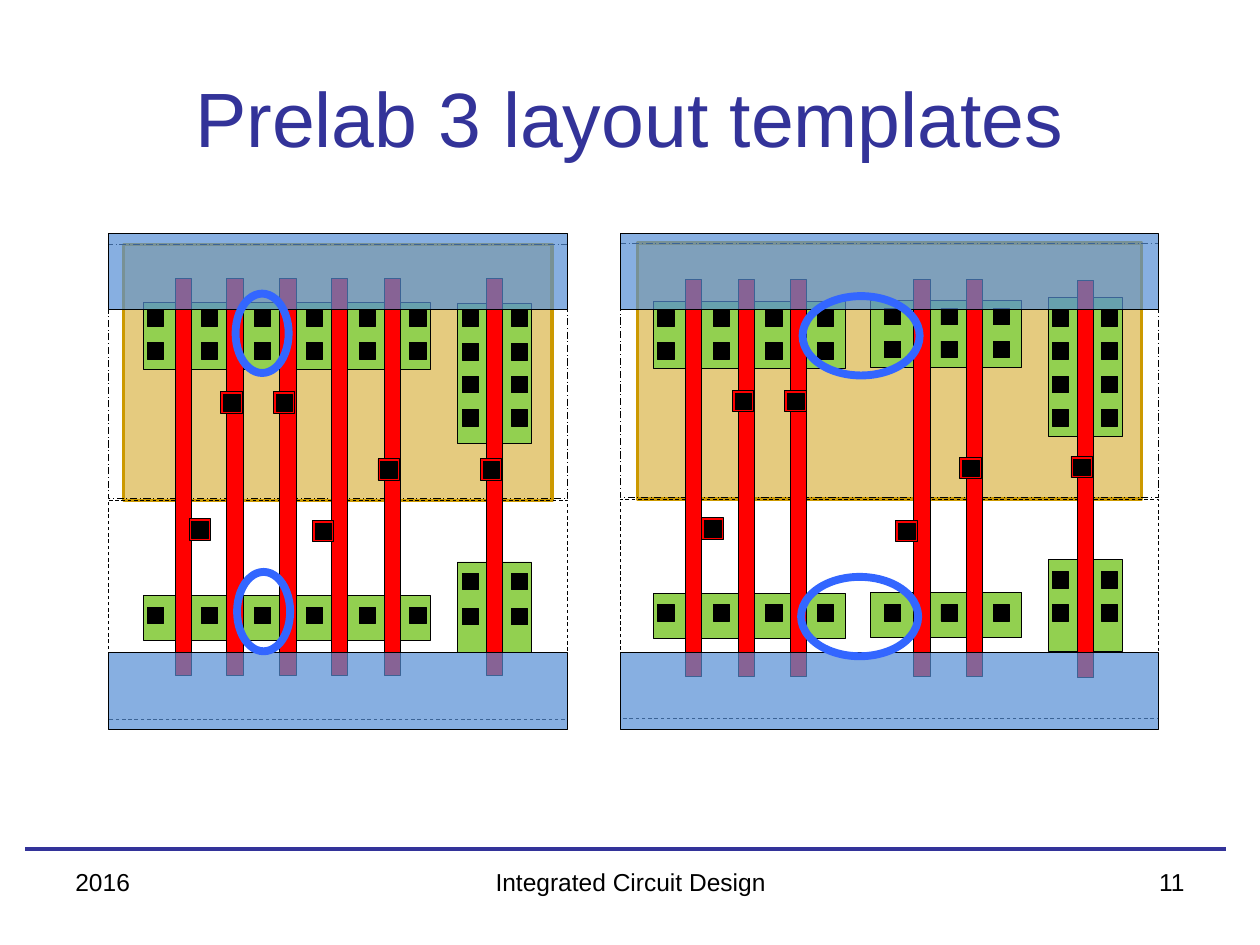
from itertools import product

from lxml import etree
from pptx import Presentation
from pptx import util as u
from pptx.dml import color
from pptx.enum import dml, shapes, text
from pptx.oxml import ns

NAVY, BLACK, RED, GREEN = "333399", "000000", "FF0000", "92D050"
OCHRE, METAL, HIGHLIGHT = "CC9900", "558ED5", "3366FF"

GATE_W, GATE_H = 0.33, 8
CONTACT, PAD, PAD_MARGIN = 0.33, 0.43, 0.06
RAIL_H, RAIL_TOPS = 1.55, (13.16, 4.7)

# All lengths in centimetres. A diffusion column holds its p and n areas as
# (top, height) bands, with contacts at each crossing of columns and rows.
NARROW_CELL = dict(
    left=2.18, width=9.27, top=4.93, middle=10.08, well=(2.49, 8.64),
    diffusions=[
        dict(left=2.9, width=5.77, bands=[(6.1, 1.35), (12.01, 0.91)],
             columns=[2.97, 4.06, 5.13, 6.17, 7.24, 8.26],
             rows=[6.25, 6.91, 12.24]),
        dict(left=9.22, width=1.5, bands=[(6.12, 2.82), (11.33, 1.83)],
             columns=[9.32, 10.31],
             rows=[6.25, 6.93, 7.59, 8.26, 11.56, 12.27]),
    ],
    gates=[(x, 5.61) for x in (3.53, 4.57, 5.64, 6.68, 7.75, 9.8)],
    pads=[(3.81, 10.46), (4.45, 7.9), (5.51, 7.9),
          (6.3, 10.49), (7.62, 9.25), (9.68, 9.25)],
)
WIDE_CELL = dict(
    left=12.5, width=10.85, top=4.9, middle=10.06, well=(12.85, 10.16),
    diffusions=[
        dict(left=13.18, width=3.86, bands=[(6.07, 1.35), (11.96, 0.91)],
             columns=[13.26, 14.38, 15.44, 16.48],
             rows=[6.25, 6.91, 12.19]),
        dict(left=17.55, width=3.05, bands=[(6.05, 1.35), (11.94, 0.91)],
             columns=[17.83, 18.97, 20.02],
             rows=[6.22, 6.88, 12.19]),
        dict(left=21.13, width=1.5, bands=[(5.99, 2.82), (11.28, 1.85)],
             columns=[21.21, 22.2],
             rows=[6.25, 6.91, 7.59, 8.26, 11.53, 12.19]),
    ],
    gates=[(13.82, 5.64), (14.88, 5.64), (15.93, 5.64),
           (18.42, 5.64), (19.48, 5.64), (21.72, 5.66)],
    pads=[(14.15, 10.44), (14.76, 7.87), (15.82, 7.87),
          (18.06, 10.49), (19.35, 9.22), (21.59, 9.2)],
)
HIGHLIGHTS = [(4.78, 11.53, 1.07), (16.15, 11.63, 2.36),
              (4.75, 5.92, 1.07), (16.18, 5.97, 2.36)]
HIGHLIGHT_H = 1.6


def rgb(hex_code):
    return color.RGBColor.from_string(hex_code)


def write(frame, content, *, size, tint=BLACK, font="Arial",
          align=text.PP_ALIGN.LEFT, anchor=text.MSO_ANCHOR.TOP):
    frame.word_wrap = True
    frame.vertical_anchor = anchor
    line = frame.paragraphs[0]
    line.alignment = align
    run = line.add_run()
    run.text = content
    run.font.size = u.Pt(size)
    run.font.name = font
    run.font.color.rgb = rgb(tint)


class Layout:
    """Drawing style and the slide, or group on it, being drawn on."""

    def __init__(self, slide):
        self.slide = slide
        self.target = slide.shapes

    def start_group(self):
        self.target = self.slide.shapes.add_group_shape().shapes

    def outline(self, kind, box, fill=None, opacity=100,
                line=BLACK, weight=0.5, dash=None):
        shape = self.target.add_shape(kind, *map(u.Cm, box))
        shape.shadow.inherit = False
        if fill:
            shape.fill.solid()
            shape.fill.fore_color.rgb = rgb(fill)
            if opacity < 100:
                tint = shape.fill._xPr.find(".//" + ns.qn("a:srgbClr"))
                etree.SubElement(tint, ns.qn("a:alpha"), val=str(opacity * 1000))
        else:
            shape.fill.background()
        shape.line.color.rgb = rgb(line)
        shape.line.width = u.Pt(weight)
        if dash:
            shape.line.dash_style = dash

    def rect(self, *box, **style):
        self.outline(shapes.MSO_SHAPE.RECTANGLE, box, **style)

    def ring(self, *box):
        self.outline(shapes.MSO_SHAPE.OVAL, box, line=HIGHLIGHT, weight=4.5)

    def contact(self, left, top):
        self.rect(left, top, CONTACT, CONTACT, fill=BLACK)

    def label(self, box, content, **style):
        area = self.slide.shapes.add_textbox(*map(u.Cm, box))
        write(area.text_frame, content, **style)

    def rule(self, left, right, top):
        divider = self.slide.shapes.add_connector(
            shapes.MSO_CONNECTOR.STRAIGHT, *map(u.Cm, (left, top, right, top)))
        divider.line.color.rgb = rgb(NAVY)
        divider.line.width = u.Pt(2.25)
        etree.SubElement(divider._element.spPr, ns.qn("a:effectLst"))

    def cell(self, left, width, top, middle, well, diffusions, gates, pads):
        """Stack one circuit cell from its well up to its power rails."""
        self.start_group()
        well_left, well_width = well
        self.rect(well_left, top, well_width, 5.16,
                  fill=OCHRE, opacity=50, line=OCHRE, weight=2)
        self.rect(left, top, width, 5.13, dash=dml.MSO_LINE.LONG_DASH_DOT)
        self.rect(left, middle, width, 4.42, dash=dml.MSO_LINE.DASH)
        for area in diffusions:
            for band_top, height in area["bands"]:
                self.rect(area["left"], band_top, area["width"], height, fill=GREEN)
        for gate in gates:
            self.rect(*gate, GATE_W, GATE_H, fill=RED)
        for area in diffusions:
            for spot in product(area["columns"], area["rows"]):
                self.contact(*spot)
        for x, y in pads:
            self.rect(x, y, PAD, PAD, fill=RED)
            self.contact(x + PAD_MARGIN, y + PAD_MARGIN)
        for rail_top in RAIL_TOPS:
            self.rect(left, rail_top, width, RAIL_H, fill=METAL, opacity=70)


def main():
    deck = Presentation()
    deck.slide_width, deck.slide_height = u.Cm(25.4), u.Cm(19.05)
    layout = Layout(deck.slides.add_slide(deck.slide_layouts[6]))

    layout.rule(0.51, 24.71, 17.12)
    layout.label((1.27, 0.76, 22.86, 3.18), "Prelab 3 layout templates",
                 size=44, tint=NAVY, align=text.PP_ALIGN.CENTER,
                 anchor=text.MSO_ANCHOR.MIDDLE)
    for left, width, content, align in (
            (1.27, 5.92, "2016", text.PP_ALIGN.LEFT),
            (8.69, 8.05, "Integrated Circuit Design", text.PP_ALIGN.CENTER),
            (18.21, 5.92, "11", text.PP_ALIGN.RIGHT)):
        layout.label((left, 17.35, width, 1.32), content, size=14, align=align)

    for template in (NARROW_CELL, WIDE_CELL):
        layout.cell(**template)
    layout.start_group()
    for left, top, width in HIGHLIGHTS:
        layout.ring(left, top, width, HIGHLIGHT_H)

    deck.save("out.pptx")


if __name__ == "__main__":
    main()
